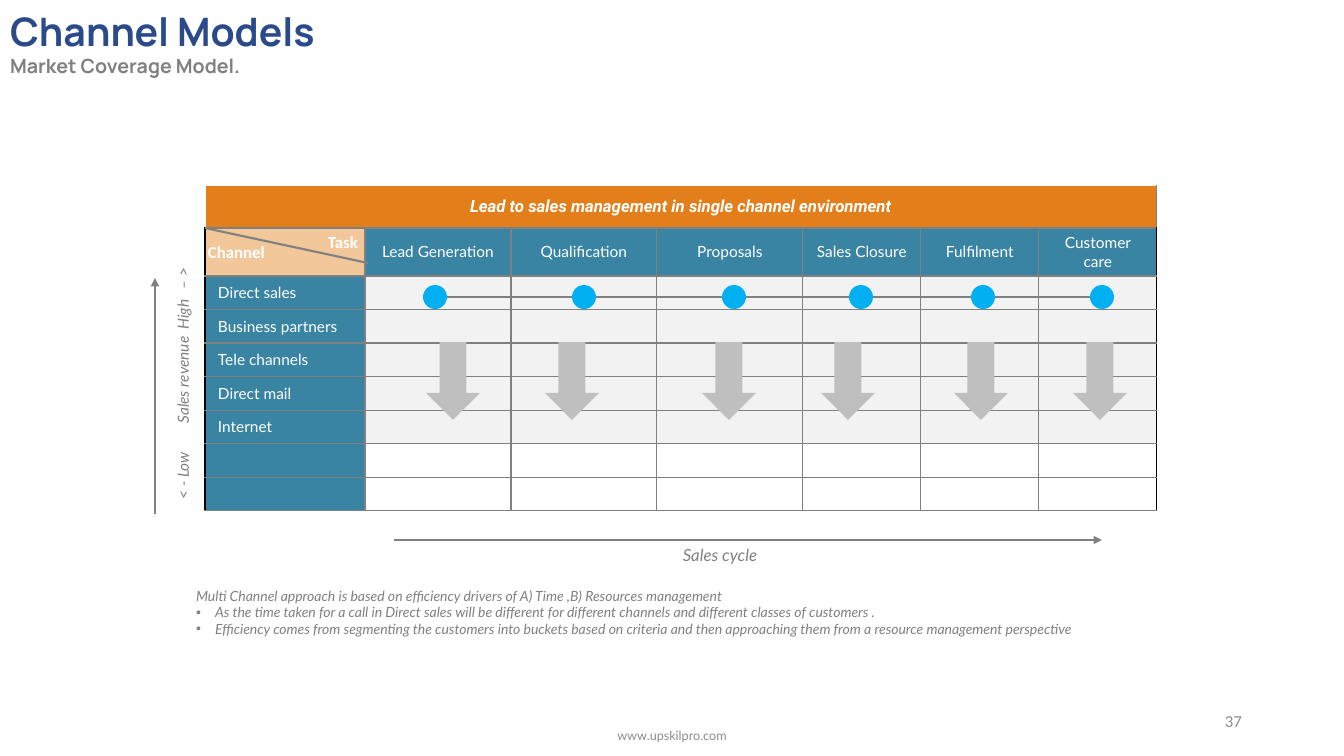
from lxml import etree
from pptx import Presentation
from pptx import util as u
from pptx.dml.color import RGBColor
from pptx.enum import shapes, text
from pptx.oxml.ns import qn

# Content
HEADING = ["Channel Models", "Market Coverage Model."]
BANNER = "Lead to sales management in single channel environment"
TASKS = ["Lead Generation", "Qualification", "Proposals", "Sales Closure",
         "Fulfilment", "Customer care"]
CHANNELS = ["Direct sales", "Business partners", "Tele channels",
            "Direct mail", "Internet", "", ""]
NOTES = [
    "Multi Channel approach is based on efficiency drivers of A) Time ,B) Resources management",
    "As the time taken for a call in Direct sales will be different for different "
    "channels and different classes of customers .",
    "Efficiency comes from segmenting the customers into buckets based on criteria "
    "and then approaching them from a resource management perspective",
]
REVENUE_AXIS = "< - Low\tSales revenue\tHigh\t– >"
REVENUE_TABS = [76, 170, 210]

# Layout in px
SLIDE = (1344, 756)
TABLE = (205, 185)
COLUMNS = [160, 146, 146, 146, 118, 118, 118]
BANNER_H, TASKS_H, CHANNELS_H = 43, 48, 235
DOT_CENTRES = [435, 584, 734, 861, 983, 1102]
DOT_Y, DOT = 297, 24
ARROW_PAIRS, ARROW_STEP = [426, 702, 954], 119
ARROW_Y, ARROW_W, ARROW_H = 342, 54, 78
AXIS_W = 234

# Formats
GREY, TEAL, WHITE, BLACK = "808080", "3984A3", "FFFFFF", "000000"
TITLE = dict(name="Manrope", size=28, color="2A4A8B", bold=True)
SUBTITLE = dict(TITLE, size=14, color=GREY)
BANNER_FONT = dict(name="Roboto", size=12, color=WHITE, bold=True, italic=True)
CELL = dict(name="Lato", size=11, color=WHITE, bold=False)
CORNER = dict(name="Calibri", size=12, color=WHITE, bold=True)
AXIS = dict(name="Lato", size=11, color=GREY, italic=True)
NOTE = dict(AXIS, size=10)
LEFT, CENTER, RIGHT = text.PP_ALIGN.LEFT, text.PP_ALIGN.CENTER, text.PP_ALIGN.RIGHT
TOP, MIDDLE = text.MSO_ANCHOR.TOP, text.MSO_ANCHOR.MIDDLE


def px(n):
    return u.Emu(round(n * 914400 / 100.8))


def rgb(value):
    return RGBColor.from_string(value)


def style(paragraph, words, fmt, align=LEFT):
    paragraph.alignment = align
    run = paragraph.add_run()
    run.text = words
    for key, value in fmt.items():
        if key == "color":
            run.font.color.rgb = rgb(value)
        else:
            setattr(run.font, key, u.Pt(value) if key == "size" else value)


def place(shape, box):
    for side, value in zip(("left", "top", "width", "height"), box):
        setattr(shape, side, px(value))


def set_frame(frame, anchor=TOP):
    frame.word_wrap = True
    frame.auto_size = text.MSO_AUTO_SIZE.NONE
    frame.vertical_anchor = anchor


def label(box, words, fmt, align=LEFT, anchor=TOP):
    shape = slide.shapes.add_textbox(*map(px, box))
    set_frame(shape.text_frame, anchor)
    style(shape.text_frame.paragraphs[0], words, fmt, align)
    return shape


def solid(kind, box, fill):
    shape = slide.shapes.add_shape(kind, *map(px, box))
    shape.shadow.inherit = False
    shape.fill.solid()
    shape.fill.fore_color.rgb = rgb(fill)
    shape.line.fill.background()


def line(ends, arrow=False):
    connector = slide.shapes.add_connector(shapes.MSO_CONNECTOR.STRAIGHT, *map(px, ends))
    connector.line.color.rgb = rgb(GREY)
    connector.line.width = u.Pt(1.5)
    props = connector.element.spPr
    if arrow:
        etree.SubElement(props.find(qn("a:ln")), qn("a:tailEnd"), type="triangle")
    etree.SubElement(props, qn("a:effectLst"))


def fill_cell(cell, fill, borders):
    cell.fill.solid()
    cell.fill.fore_color.rgb = rgb(fill)
    cell.vertical_anchor = MIDDLE
    cell.margin_left = cell.margin_right = px(13)
    cell.margin_top = cell.margin_bottom = px(5)
    props = cell._tc.get_or_add_tcPr()
    for i, side in enumerate("LRTB"):
        color, width = borders.get(side, (GREY, 1))
        edge = etree.Element(qn("a:ln" + side), w=str(u.Pt(width)))
        paint = etree.SubElement(edge, qn("a:solidFill"))
        etree.SubElement(paint, qn("a:srgbClr"), val=color)
        props.insert(i, edge)


prs = Presentation()
prs.slide_width, prs.slide_height = map(px, SLIDE)
slide = prs.slides.add_slide(prs.slide_layouts[1])

# Heading
heading = slide.shapes.title
place(heading, (0, 2, 459, 82))
set_frame(heading.text_frame)
style(heading.text_frame.paragraphs[0], HEADING[0], TITLE)
style(heading.text_frame.add_paragraph(), HEADING[1], SUBTITLE)

# Notes under the table
notes = slide.placeholders[1]
place(notes, (186, 582, 985, 78))
set_frame(notes.text_frame)
for i, words in enumerate(NOTES):
    paragraph = notes.text_frame.paragraphs[0] if i == 0 else notes.text_frame.add_paragraph()
    props = paragraph._p.get_or_add_pPr()
    indent = px(19) if i else 0
    props.set("marL", str(indent))
    props.set("indent", str(-indent))
    if i:
        etree.SubElement(props, qn("a:buFont"), typeface="Arial")
        etree.SubElement(props, qn("a:buChar"), char="•")
    else:
        etree.SubElement(props, qn("a:buNone"))
    paragraph.space_before = u.Pt(0)
    style(paragraph, words, NOTE)

# Coverage table
row_heights = [BANNER_H, TASKS_H] + [CHANNELS_H / len(CHANNELS)] * len(CHANNELS)
grid = slide.shapes.add_table(len(row_heights), len(COLUMNS), *map(
    px, (*TABLE, sum(COLUMNS), sum(row_heights)))).table
grid.first_row = grid.horz_banding = False
for column, width in zip(grid.columns, COLUMNS):
    column.width = px(width)
for row, height in zip(grid.rows, row_heights):
    row.height = px(height)

rows = [[BANNER] + [""] * len(TASKS), [""] + TASKS]
rows += [[channel] + [""] * len(TASKS) for channel in CHANNELS]
for r, row in enumerate(rows):
    for c, words in enumerate(row):
        borders = {}
        if c == 0:
            borders["L"] = (BLACK, 1)
        if c == len(TASKS):
            borders["R"] = (BLACK, 1)
        if r == 0:
            fill = "E37F1B"
            borders.update(L=(WHITE, 2.25), T=(WHITE, 0.25))
        elif r == 1 and c == 0:
            fill = "F2C79A"
        elif r == 1 or c == 0:
            fill = TEAL
        else:
            fill = "F2F2F2" if CHANNELS[r - 2] else WHITE
        cell = grid.cell(r, c)
        fill_cell(cell, fill, borders)
        paragraph = cell.text_frame.paragraphs[0]
        if words:
            style(paragraph, words, BANNER_FONT if r == 0 else CELL, CENTER if r < 2 else LEFT)
        else:
            etree.SubElement(paragraph._p, qn("a:endParaRPr"), sz="1100")
grid.cell(0, 0).merge(grid.cell(0, len(TASKS)))

# Split corner cell
label((198, 237, 114, 30), "Channel", CORNER)
label((295, 227, 73, 30), "Task", CORNER, RIGHT)
line((368, 263, 205, 228))

# Direct sales path
line((426, DOT_Y, 1109, DOT_Y))
for x in DOT_CENTRES:
    solid(shapes.MSO_SHAPE.OVAL, (x - DOT / 2, DOT_Y - DOT / 2, DOT, DOT), "00B0F0")

# Arrows down through the channels
for start in ARROW_PAIRS:
    for x in (start, start + ARROW_STEP):
        solid(shapes.MSO_SHAPE.DOWN_ARROW, (x, ARROW_Y, ARROW_W, ARROW_H), "BFBFBF")

# Axes
label((596, 540, 248, 30), "Sales cycle", dict(AXIS, size=12), CENTER)
line((394, 540, 1102, 540), arrow=True)
line((155, 514, 155, 278), arrow=True)
revenue = label((183 - AXIS_W / 2, 368, AXIS_W, 29), REVENUE_AXIS, AXIS)
revenue.rotation = 270
revenue.text_frame.margin_left = revenue.text_frame.margin_right = 0
tabs = etree.SubElement(revenue.text_frame.paragraphs[0]._p.get_or_add_pPr(), qn("a:tabLst"))
for stop in REVENUE_TABS:
    etree.SubElement(tabs, qn("a:tab"), pos=str(px(stop)), algn="l")

# Footer
label((950, 701, 302, 40), "37", dict(name="Calibri", size=12, color="8C8C8C"), RIGHT, MIDDLE)
label((445, 715, 454, 40), "www.upskilpro.com", dict(name="Lato", size=9, color="8C8C8C"),
      CENTER, MIDDLE)

prs.save("out.pptx")
